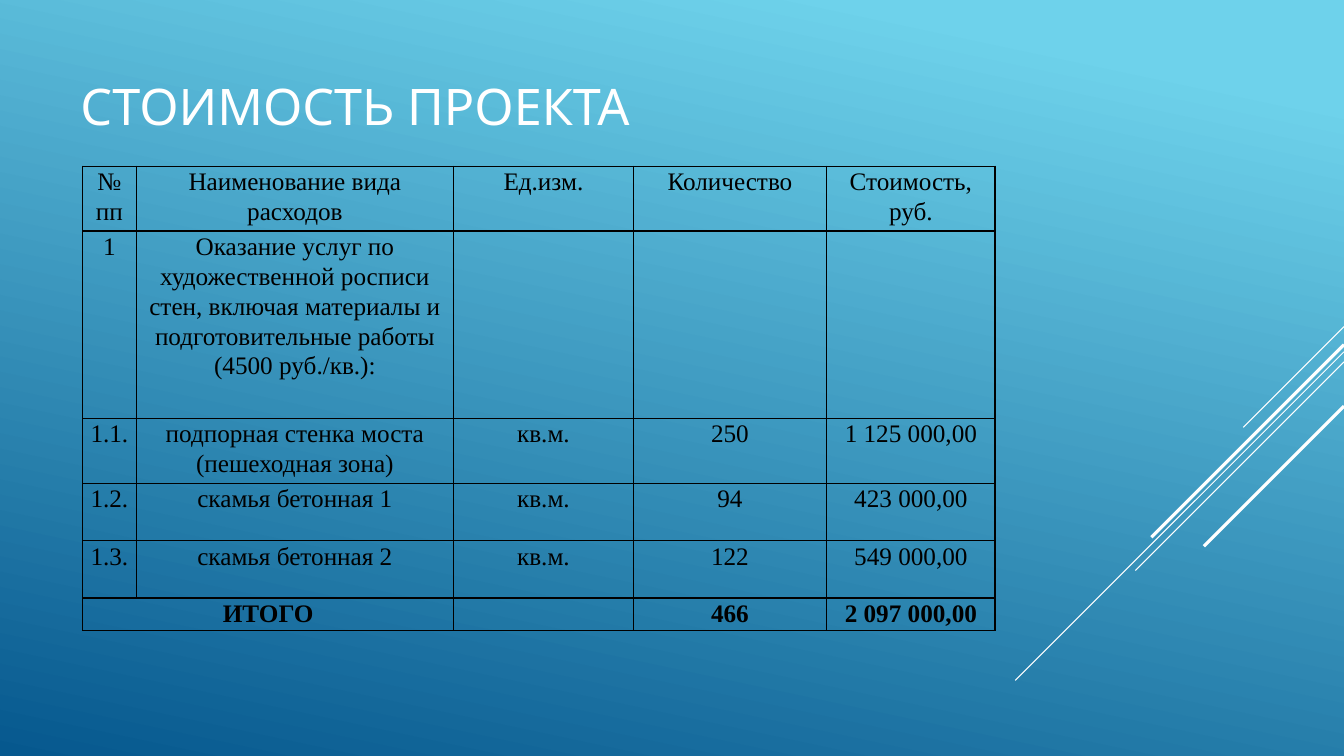
from lxml.etree import SubElement as Sub
from pptx import Presentation
from pptx.dml.color import RGBColor as RGB
from pptx.enum.shapes import MSO_CONNECTOR as Link
from pptx.enum.text import MSO_ANCHOR as Anchor, PP_ALIGN as Align
from pptx.oxml.ns import qn
from pptx.util import Inches, Pt

HUES = {"sky": "6ED2EB", "sea": "06588E", "white": "FFFFFF", "black": "000000"}
WIDE, HIGH = 13.33, 7.5
TITLE = "СТОИМОСТЬ ПРОЕКТА"
COLS = [0.53, 3.15, 1.78, 1.92, 1.67]
ROWS = [0.62, 1.86, 0.62, 0.57, 0.57, 0.31]
COSTS = [
    ["№ пп", "Наименование вида расходов", "Ед.изм.", "Количество", "Стоимость, руб."],
    ["1", "Оказание услуг по художественной росписи стен, включая материалы "
     "и подготовительные работы (4500 руб./кв.):", "", "", ""],
    ["1.1.", "подпорная стенка моста (пешеходная зона)", "кв.м.", "250", "1 125 000,00"],
    ["1.2.", "скамья бетонная 1", "кв.м.", "94", "423 000,00"],
    ["1.3.", "скамья бетонная 2", "кв.м.", "122", "549 000,00"],
    ["ИТОГО", "", "", "466", "2 097 000,00"],
]
# Diagonals from the right edge: start height, run to the lower left, weight
RAYS = [(3.24, 1, 0.75), (3.49, 3.26, 0.75), (3.59, 2.07, 0.75),
        (3.42, 1.91, 2.25), (4.03, 1.39, 2.25)]


def hue(name):
    return RGB.from_string(HUES[name])


def write(para, text, face, size, tint, bold=False):
    run = para.add_run()
    run.text = text
    font = run.font
    font.name, font.size, font.bold = face, Pt(size), bold
    font.color.rgb = hue(tint)


def paint(slide):
    fill = slide.background.fill
    fill.gradient()
    fill.gradient_angle = 258
    for stop, (place, tint) in zip(fill.gradient_stops, [(0.1, "sky"), (1, "sea")]):
        stop.position = place
        stop.color.rgb = hue(tint)


def draw_ray(slide, top, run, weight):
    ray = slide.shapes.add_connector(
        Link.STRAIGHT, Inches(WIDE), Inches(top), Inches(WIDE - run), Inches(top + run))
    ray.line.color.rgb = hue("white")
    ray.line.width = Pt(weight)
    Sub(ray._element.spPr, qn("a:effectLst"))


def add_title(slide):
    box = slide.shapes.add_textbox(Inches(0.7), Inches(0.34), Inches(8.97), Inches(1.41))
    frame = box.text_frame
    frame.word_wrap = True
    frame.vertical_anchor = Anchor.MIDDLE
    write(frame.paragraphs[0], TITLE, "League Spartan", 36, "white")


def frame_cell(cell):
    """Clear the fill and rule all four sides."""
    cell.fill.background()
    props = cell._tc.get_or_add_tcPr()
    for spot, side in enumerate(("lnL", "lnR", "lnT", "lnB")):
        line = Sub(props, qn(f"a:{side}"), w=str(Pt(1)))
        Sub(Sub(line, qn("a:solidFill")), qn("a:srgbClr"), val=HUES["black"])
        props.insert(spot, line)


def fill_cell(cell, text, bold):
    cell.margin_left = cell.margin_right = Inches(0.02)
    cell.margin_top = cell.margin_bottom = 0
    para = cell.text_frame.paragraphs[0]
    para.alignment = Align.CENTER
    para.line_spacing = 1.07
    para.font.size = Pt(18)
    if text:
        write(para, text, "Times New Roman", 18, "black", bold)
    else:
        Sub(para._p, qn("a:endParaRPr"), sz="1200")
    frame_cell(cell)


def add_costs(slide):
    table = slide.shapes.add_table(
        len(ROWS), len(COLS), Inches(0.82), Inches(1.65),
        Inches(sum(COLS)), Inches(sum(ROWS))).table
    table.first_row = table.horz_banding = False
    for col, width in zip(table.columns, COLS):
        col.width = Inches(width)
    last = len(ROWS) - 1
    for r, (height, texts) in enumerate(zip(ROWS, COSTS)):
        table.rows[r].height = Inches(height)
        for c, text in enumerate(texts):
            fill_cell(table.cell(r, c), text, r == last)
    table.cell(last, 0).merge(table.cell(last, 1))


def main():
    deck = Presentation()
    deck.slide_width, deck.slide_height = Inches(WIDE), Inches(HIGH)
    slide = deck.slides.add_slide(deck.slide_layouts[6])
    paint(slide)
    for ray in RAYS:
        draw_ray(slide, *ray)
    add_title(slide)
    add_costs(slide)
    deck.save("out.pptx")


if __name__ == "__main__":
    main()
